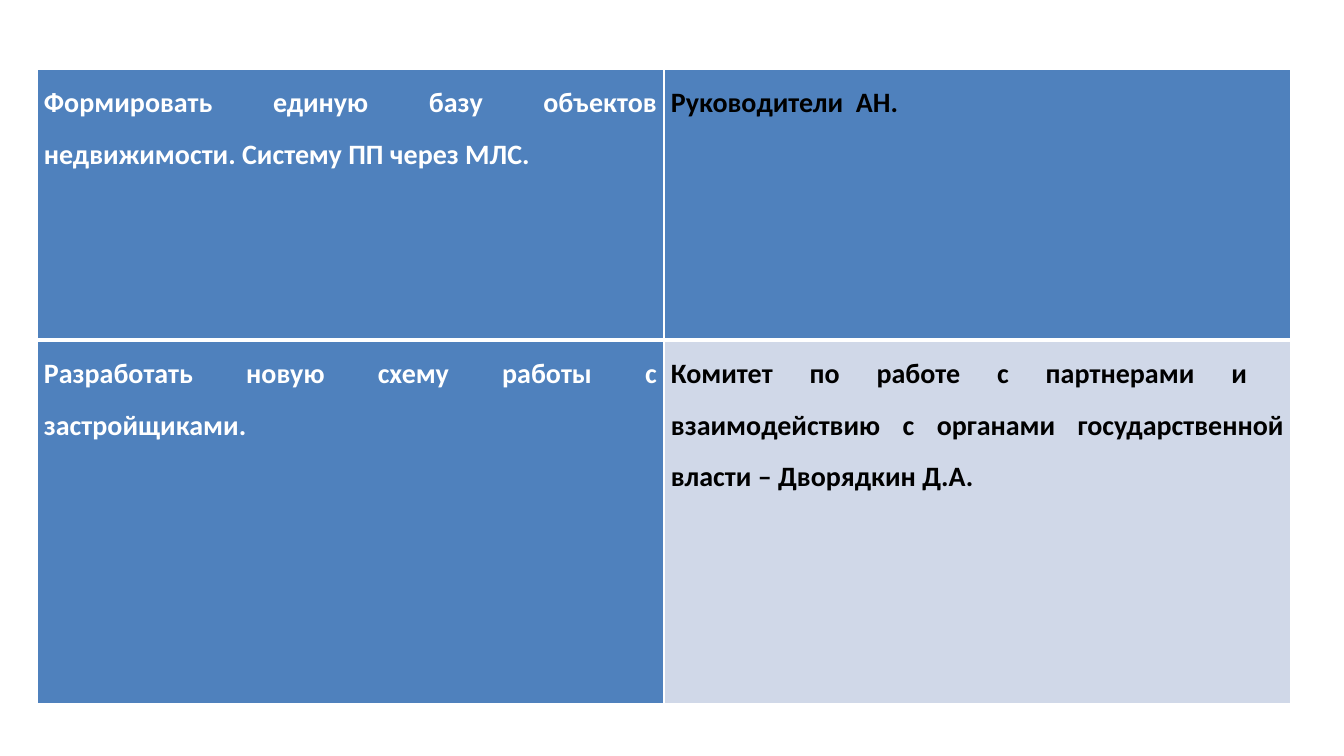
import pptx
import pptx.dml.color
import pptx.enum.text
import pptx.oxml
import pptx.oxml.ns
import pptx.util

PX = 914400 / 100.8
THEME = {
    "font": "Calibri",
    "size": 20,
    "blue": "4F81BD",
    "pale": "D0D8E8",
    "white": "FFFFFF",
    "black": "000000",
    "thin": 1,
    "thick": 3,
}


def px(length):
    return pptx.util.Emu(round(length * PX))


def add_border(cell, side, points):
    cell._tc.get_or_add_tcPr().append(pptx.oxml.parse_xml(
        f'<a:ln{side} {pptx.oxml.ns.nsdecls("a")} w="{pptx.util.Pt(points)}">'
        f'<a:solidFill><a:srgbClr val="{THEME["white"]}"/></a:solidFill></a:ln{side}>'
    ))


tasks = [
    [
        ("Формировать единую базу объектов недвижимости. Систему ПП через МЛС.", "white", "blue"),
        ("Руководители  АН.", "black", "blue"),
    ],
    [
        ("Разработать новую схему работы с застройщиками.", "white", "blue"),
        ("Комитет по работе с партнерами и  взаимодействию с органами "
         "государственной власти – Дворядкин Д.А.", "black", "pale"),
    ],
]
row_heights = [271, 364]
column_width = 627

deck = pptx.Presentation()
deck.slide_width = px(1344)
deck.slide_height = px(756)
page = deck.slides.add_slide(deck.slide_layouts[6])

table = page.shapes.add_table(
    2, 2, px(37), px(69), px(2 * column_width), px(sum(row_heights))
).table
for column in table.columns:
    column.width = px(column_width)

for row_index, task in enumerate(tasks):
    table.rows[row_index].height = px(row_heights[row_index])
    divider = "B" if row_index == 0 else "T"
    for column_index, (text, ink, fill) in enumerate(task):
        cell = table.cell(row_index, column_index)
        cell.margin_left = cell.margin_right = px(7)
        cell.margin_top = cell.margin_bottom = 0
        for side in "LRTB":
            add_border(cell, side, THEME["thick" if side == divider else "thin"])
        cell.fill.solid()
        cell.fill.fore_color.rgb = pptx.dml.color.RGBColor.from_string(THEME[fill])
        cell.text = text
        para = cell.text_frame.paragraphs[0]
        para.alignment = pptx.enum.text.PP_ALIGN.JUSTIFY
        para.line_spacing = 1.5
        para.font.name = THEME["font"]
        para.font.size = pptx.util.Pt(THEME["size"])
        para.font.bold = True
        para.font.color.rgb = pptx.dml.color.RGBColor.from_string(THEME[ink])

deck.save("out.pptx")
